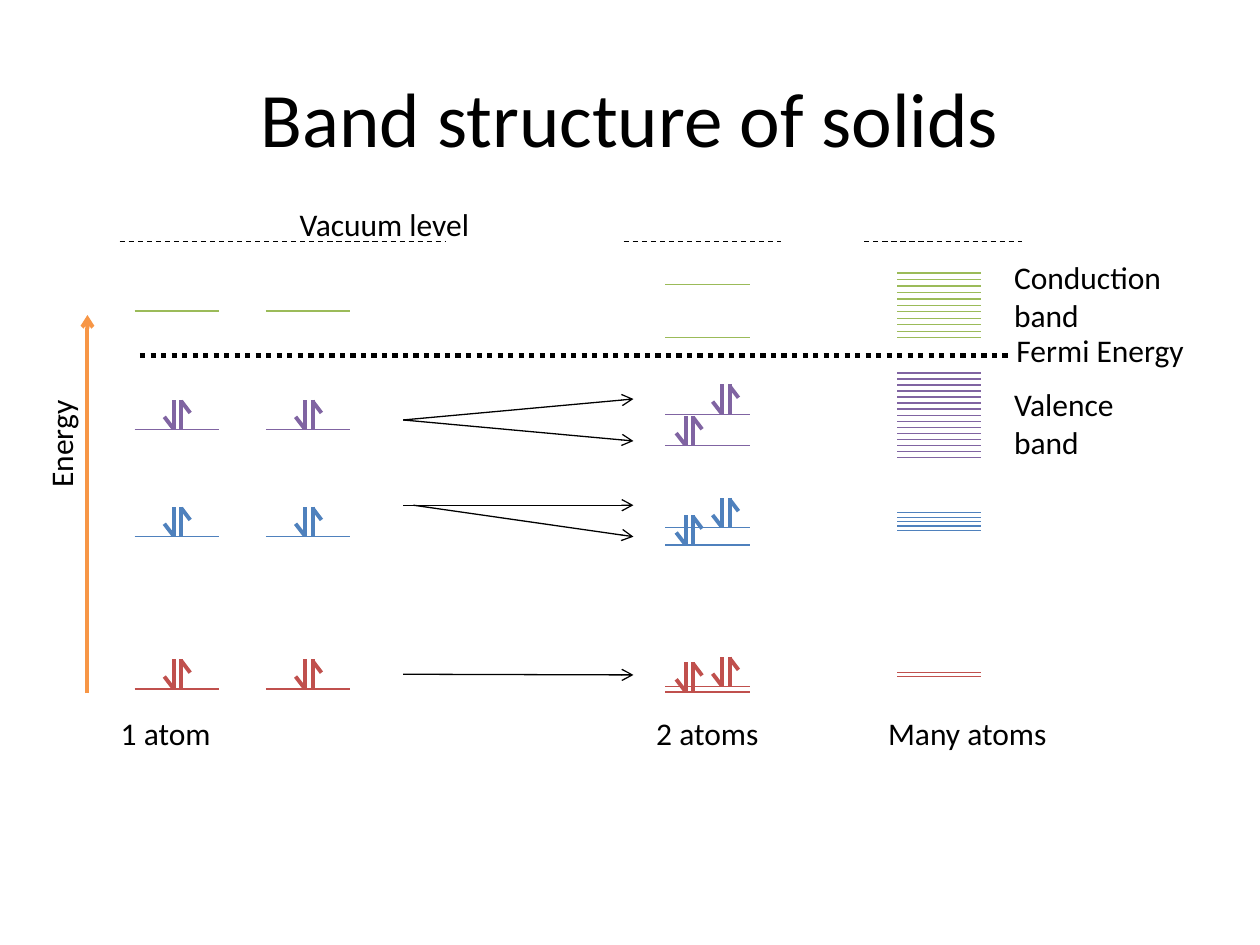
from lxml import etree
from pptx import Presentation
from pptx.dml.color import RGBColor
from pptx.enum.dml import MSO_LINE
from pptx.enum.shapes import MSO_CONNECTOR
from pptx.enum.text import MSO_ANCHOR, MSO_AUTO_SIZE, PP_ALIGN
from pptx.oxml.ns import qn
from pptx.util import Pt

STRAIGHT = MSO_CONNECTOR.STRAIGHT
DASH, DOTS = MSO_LINE.DASH, MSO_LINE.ROUND_DOT
CENTER, MIDDLE = PP_ALIGN.CENTER, MSO_ANCHOR.MIDDLE
GROW = MSO_AUTO_SIZE.SHAPE_TO_FIT_TEXT

COLORS = {"black": "000000", "green": "9BBB59", "purple": "8064A2",
          "blue": "4F81BD", "red": "C0504D", "orange": "F79646"}
THIN, BOLD, HEAVY = 0.75, 2.25, 3

LEVEL_WIDTH = 48.2
ONE_ATOM_LEFTS = (77, 152)
TWO_ATOMS_LEFT = 380.2
MANY_ATOMS_LEFT = 512.6

# Level heights for one atom, and upper and lower level for two atoms
ONE_ATOM_LEVELS = {"green": 177.8, "purple": 245.4, "blue": 306.5, "red": 393.8}
TWO_ATOM_LEVELS = {"green": (162.7, 193), "purple": (236.7, 254.7),
                   "blue": (301.5, 311.5), "red": (392.2, 395.4)}
# Band of many atoms: top, bottom, number of levels
BANDS = {"green": (156, 193, 11), "purple": (213.1, 261.4, 15),
         "blue": (293, 303.1, 5), "red": (384.2, 386.5, 2)}
FILLED = ("purple", "blue", "red")
# Centre of the electron pair, measured from the left end of its level
PAIR_ON_ONE_ATOM = 24.5
PAIRS_ON_TWO_ATOMS = (34.6, 13.8)
# Strokes of an electron pair, measured from its foot
PAIR_STROKES = ((2.2, -17, 2.2, 0), (2.2, -16, 7.2, -9.4),
                (-2.2, 0, -2.2, -17), (-2.6, -0.7, -7.6, -7.2))

VACUUM_HEIGHT = 138
VACUUM_SPANS = ((68.4, 254.2), (356.4, 446.4), (493.9, 583.9))
SPLITTING_ARROWS = ((230.4, 240, 362, 228), (230.4, 240, 362, 252),
                    (230.4, 288.7, 362, 288.7), (236.2, 288.7, 362, 306.7),
                    (230.4, 385.3, 362, 385.7))
# Lines of text, then left, top, width, height
LABELS = ((("Fermi Energy",), 573.8, 185.8, 122.4, 29),
          (("Valence", "band"), 572.4, 216.7, 79.2, 50.4),
          (("Conduction", "band"), 572.4, 144, 105.8, 50.4),
          (("Vacuum level",), 164.2, 113.8, 122.4, 29),
          (("1 atom",), 61.9, 404.6, 66.2, 29),
          (("2 atoms",), 367.9, 404.6, 73.4, 29),
          (("Many atoms",), 500.4, 404.6, 110.2, 29))


def set_values(target, values):
    for name, value in values.items():
        setattr(target, name, value)


def format_font(span, size):
    set_values(span.font, {"name": "Calibri", "size": Pt(size)})
    span.font.color.rgb = RGBColor.from_string(COLORS["black"])


def add_title(page, text):
    title = page.shapes.title
    set_values(title, {"left": Pt(36), "top": Pt(21.6),
                       "width": Pt(648), "height": Pt(90)})
    title.text_frame.vertical_anchor = MIDDLE
    para = title.text_frame.paragraphs[0]
    para.alignment = CENTER
    span = para.add_run()
    span.text = text
    format_font(span, 44)


def add_label(page, lines, left, top, width, height):
    box = page.shapes.add_textbox(Pt(left), Pt(top), Pt(width), Pt(height))
    frame = box.text_frame
    set_values(frame, {"word_wrap": False, "auto_size": GROW})
    for number, line in enumerate(lines):
        para = frame.add_paragraph() if number else frame.paragraphs[0]
        span = para.add_run()
        span.text = line
        format_font(span, 18)
    return box


def add_line(page, ends, color="black", weight=THIN, dash=None, arrow=False):
    line = page.shapes.add_connector(STRAIGHT, *(Pt(end) for end in ends))
    line.line.color.rgb = RGBColor.from_string(COLORS[color])
    set_values(line.line, {"width": Pt(weight), "dash_style": dash})
    if arrow:
        etree.SubElement(line.line._get_or_add_ln(), qn("a:tailEnd"), type="arrow")
    etree.SubElement(line._element.spPr, qn("a:effectLst"))


def add_level(page, left, height, color):
    add_line(page, (left, height, left + LEVEL_WIDTH, height), color)


def add_electron_pair(page, x, y, color):
    """Draw a spin-down and a spin-up half arrow standing at (x, y)."""
    for x1, y1, x2, y2 in PAIR_STROKES:
        add_line(page, (x + x1, y + y1, x + x2, y + y2), color, BOLD)


def add_one_atom_levels(page):
    for color, height in ONE_ATOM_LEVELS.items():
        for left in ONE_ATOM_LEFTS:
            add_level(page, left, height, color)
            if color in FILLED:
                add_electron_pair(page, left + PAIR_ON_ONE_ATOM, height, color)


def add_two_atom_levels(page):
    for color, heights in TWO_ATOM_LEVELS.items():
        for height, offset in zip(heights, PAIRS_ON_TWO_ATOMS):
            add_level(page, TWO_ATOMS_LEFT, height, color)
            if color in FILLED:
                add_electron_pair(page, TWO_ATOMS_LEFT + offset, height, color)


def add_bands(page):
    for color, (top, bottom, count) in BANDS.items():
        gap = (bottom - top) / (count - 1)
        for number in range(count):
            add_level(page, MANY_ATOMS_LEFT, top + number * gap, color)


def main():
    deck = Presentation()
    set_values(deck, {"slide_width": Pt(720), "slide_height": Pt(540)})
    page = deck.slides.add_slide(deck.slide_layouts.get_by_name("Title Only"))
    add_title(page, "Band structure of solids")

    for start, end in VACUUM_SPANS:
        add_line(page, (start, VACUUM_HEIGHT, end, VACUUM_HEIGHT), dash=DASH)
    add_line(page, (80, 203.2, 578, 203.2), weight=HEAVY, dash=DOTS)
    add_line(page, (50, 396, 50, 180), "orange", BOLD, arrow=True)

    add_one_atom_levels(page)
    add_two_atom_levels(page)
    add_bands(page)
    for ends in SPLITTING_ARROWS:
        add_line(page, ends, arrow=True)

    for label in LABELS:
        add_label(page, *label)
    axis_label = add_label(page, ("Energy",), 20.2, 228.2, 36, 57.6)
    axis_label.text_frame._txBody.bodyPr.set("vert", "vert270")

    deck.save("out.pptx")


if __name__ == "__main__":
    main()
